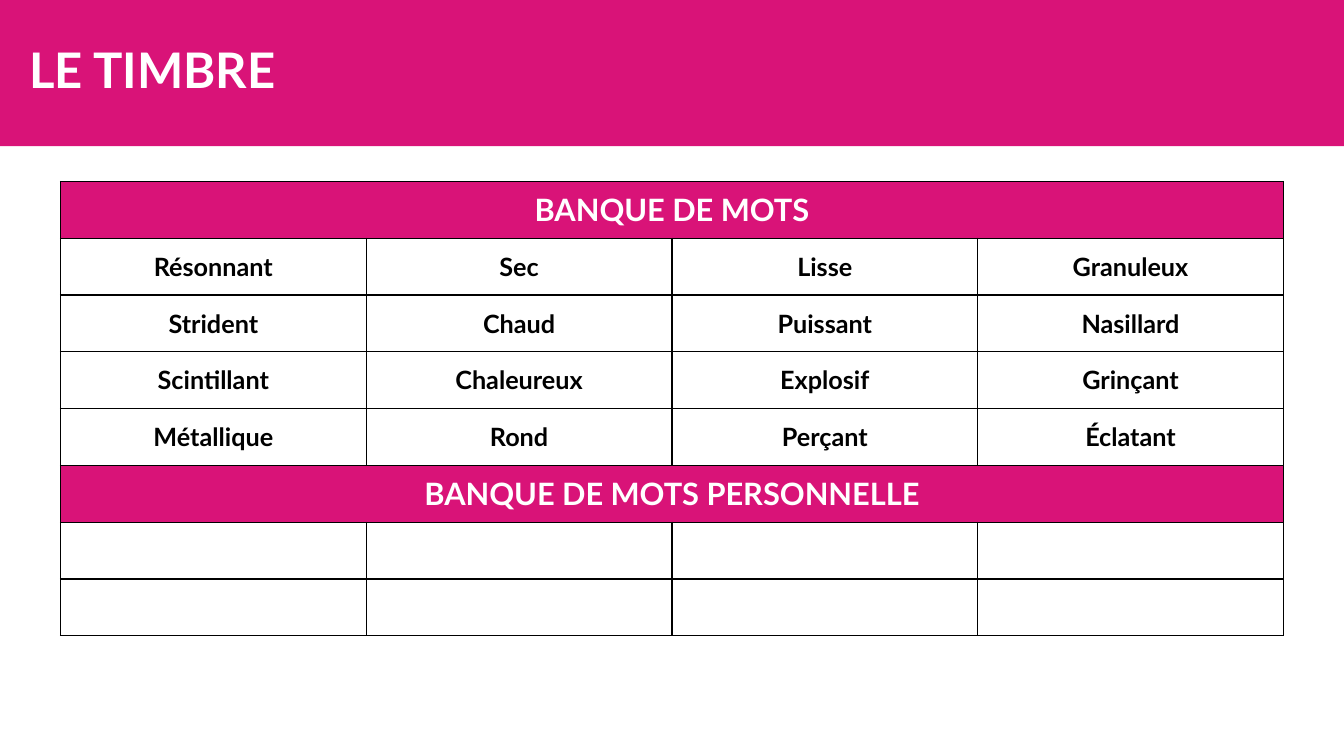
from dataclasses import dataclass

from lxml.etree import SubElement
from pptx import Presentation
from pptx.dml.color import RGBColor
from pptx.enum.text import MSO_ANCHOR, MSO_AUTO_SIZE, PP_ALIGN
from pptx.oxml.ns import qn
from pptx.util import Inches, Pt


@dataclass(frozen=True)
class Theme:
    font: str = "Lato"
    accent: str = "D91378"
    paper: str = "FFFFFF"
    ink: str = "000000"
    title_size: float = 35
    heading_size: float = 22
    word_size: float = 18
    border: float = 1


def apply_format(target, values):
    for name, value in values.items():
        setattr(target, name, value)


class SlideBuilder:
    def __init__(self, deck, theme):
        self.deck, self.theme = deck, theme
        self.slide = deck.slides.add_slide(deck.slide_layouts[5])

    def place(self, left, top, width, height):
        """Turn percentages of the slide into lengths."""
        across, down = self.deck.slide_width / 100, self.deck.slide_height / 100
        return {"left": round(left * across), "top": round(top * down),
                "width": round(width * across), "height": round(height * down)}

    def paint(self, part, color):
        part.fill.solid()
        part.fill.fore_color.rgb = RGBColor.from_string(color)

    def add_words(self, paragraph, text, size, color, **layout):
        run = paragraph.add_run()
        run.text = text
        apply_format(run.font, {"name": self.theme.font, "size": Pt(size), "bold": True})
        run.font.color.rgb = RGBColor.from_string(color)
        apply_format(paragraph, layout)

    def banner(self, text, area):
        title = self.slide.shapes.title
        apply_format(title, self.place(*area))
        self.paint(title, self.theme.accent)
        frame = title.text_frame
        apply_format(frame, {"auto_size": MSO_AUTO_SIZE.NONE, "word_wrap": True,
                             "vertical_anchor": MSO_ANCHOR.MIDDLE,
                             "margin_left": Inches(0.29)})
        self.add_words(frame.paragraphs[0], text, self.theme.title_size, self.theme.paper,
                       alignment=PP_ALIGN.LEFT, line_spacing=0.9)

    def outline(self, cell):
        properties = cell._tc.get_or_add_tcPr()
        for side in ("a:lnL", "a:lnR", "a:lnT", "a:lnB"):
            line = SubElement(properties, qn(side), w=str(Pt(self.theme.border)))
            fill = SubElement(line, qn("a:solidFill"))
            SubElement(fill, qn("a:srgbClr"), val=self.theme.ink)

    def word_table(self, rows, columns, area):
        theme = self.theme
        table = self.slide.shapes.add_table(len(rows), columns, **self.place(*area)).table
        apply_format(table, {"first_row": False, "horz_banding": False})
        for row_index, words in enumerate(rows):
            is_heading = len(words) == 1
            fill, color, size = ((theme.accent, theme.paper, theme.heading_size) if is_heading
                                 else (theme.paper, theme.ink, theme.word_size))
            if is_heading:
                table.cell(row_index, 0).merge(table.cell(row_index, columns - 1))
            for column in range(columns):
                cell = table.cell(row_index, column)
                self.outline(cell)
                self.paint(cell, fill)
                cell.vertical_anchor = MSO_ANCHOR.MIDDLE
                if column < len(words) and words[column]:
                    self.add_words(cell.text_frame.paragraphs[0], words[column], size, color,
                                   alignment=PP_ALIGN.CENTER)


COLUMNS = 4
BLANK_ROW = [""] * COLUMNS
WORD_BANK = [
    ["BANQUE DE MOTS"],
    ["Résonnant", "Sec", "Lisse", "Granuleux"],
    ["Strident", "Chaud", "Puissant", "Nasillard"],
    ["Scintillant", "Chaleureux", "Explosif", "Grinçant"],
    ["Métallique", "Rond", "Perçant", "Éclatant"],
    ["BANQUE DE MOTS PERSONNELLE"],
    BLANK_ROW,
    BLANK_ROW,
]


def main():
    deck = Presentation()
    apply_format(deck, {"slide_width": Inches(13.33), "slide_height": Inches(7.5)})
    timbre = SlideBuilder(deck, Theme())

    # Title banner
    timbre.banner("LE TIMBRE", (0, 0, 100, 19.33))

    # Word bank and personal word bank
    timbre.word_table(WORD_BANK, COLUMNS, (4.5, 24, 91, 60.13))

    deck.save("out.pptx")


if __name__ == "__main__":
    main()
